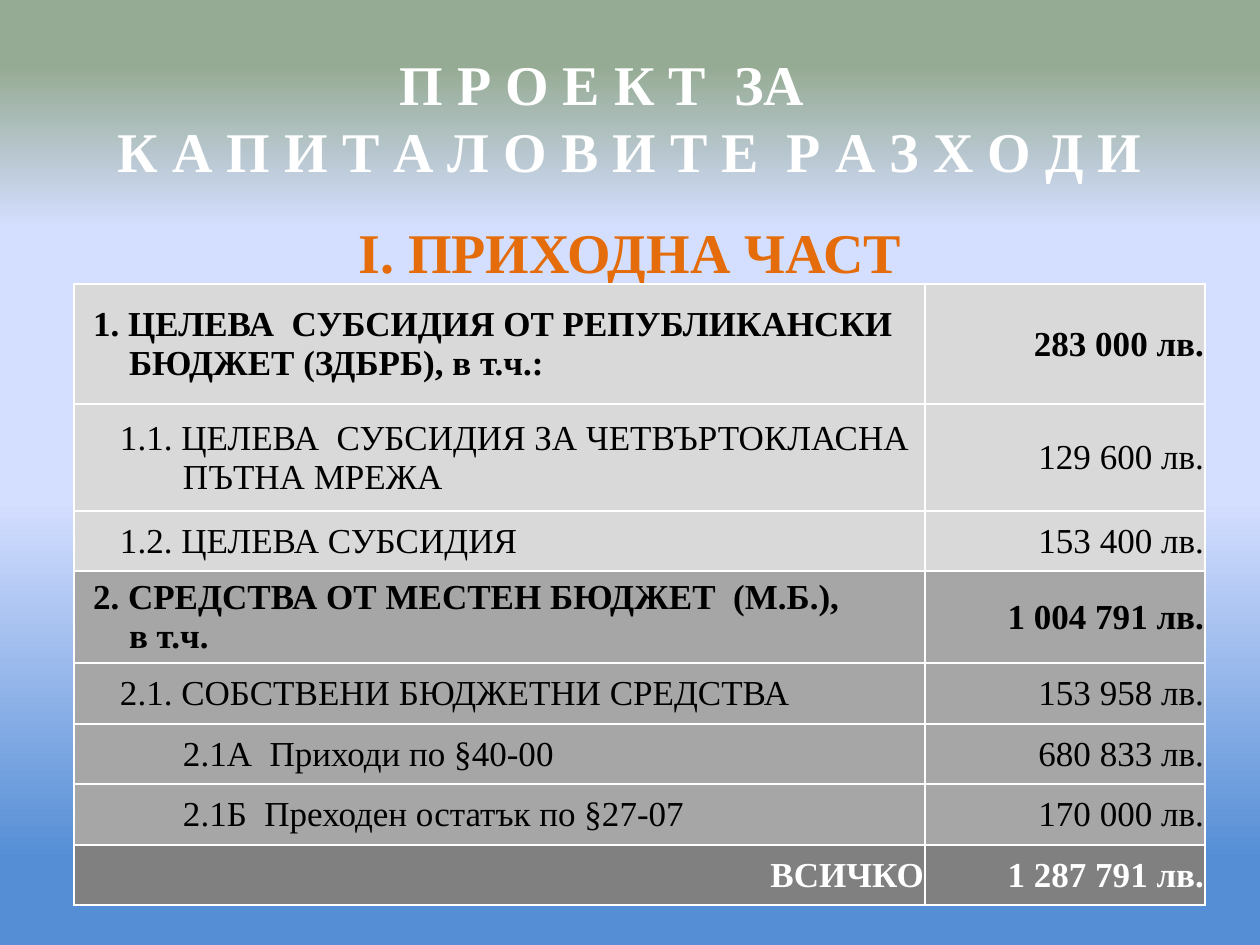
from lxml import etree
from pptx import Presentation
from pptx import util as u
from pptx.dml.color import RGBColor
from pptx.enum import text
from pptx.oxml.ns import qn

FONT = "Times New Roman"
WHITE = RGBColor(0xFF, 0xFF, 0xFF)
BLACK = RGBColor(0, 0, 0)
ORANGE = RGBColor(0xE4, 0x6C, 0x0A)
LIGHT = RGBColor(0xD9, 0xD9, 0xD9)
MEDIUM = RGBColor(0xA6, 0xA6, 0xA6)
DARK = RGBColor(0x80, 0x80, 0x80)
BLUE = RGBColor(0x55, 0x8E, 0xD5)
PALE = RGBColor(0xD4, 0xDE, 0xFF)
GREEN = RGBColor(0x96, 0xAB, 0x94)

LEFT, CENTER, RIGHT = (text.PP_ALIGN.LEFT, text.PP_ALIGN.CENTER,
                       text.PP_ALIGN.RIGHT)
SPACE = 9  # indent unit of the table, px

# Lines as (indent units, text), amount, fill, row height, heading row
ROWS = [
    ([(2, "1. ЦЕЛЕВА  СУБСИДИЯ ОТ РЕПУБЛИКАНСКИ"),
      (6, "БЮДЖЕТ (ЗДБРБ), в т.ч.:")], "283 000 лв.", LIGHT, 120, True),
    ([(5, "1.1. ЦЕЛЕВА  СУБСИДИЯ ЗА ЧЕТВЪРТОКЛАСНА"),
      (12, "ПЪТНА МРЕЖА")], "129 600 лв.", LIGHT, 107, False),
    ([(5, "1.2. ЦЕЛЕВА СУБСИДИЯ")], "153 400 лв.", LIGHT, 60, False),
    ([(2, "2. СРЕДСТВА ОТ МЕСТЕН БЮДЖЕТ  (М.Б.),"),
      (6, "в т.ч.")], "1 004 791 лв.", MEDIUM, 92, True),
    ([(5, "2.1. СОБСТВЕНИ БЮДЖЕТНИ СРЕДСТВА")], "153 958 лв.", MEDIUM, 61,
     False),
    ([(12, "2.1А  Приходи по §40-00")], "680 833 лв.", MEDIUM, 60, False),
    ([(12, "2.1Б  Преходен остатък по §27-07")], "170 000 лв.", MEDIUM, 61,
     False),
    ([(0, "ВСИЧКО")], "1 287 791 лв.", DARK, 60, True),
]


def px(n):
    return u.Emu(round(n * 914400 / 126))


def write(p, words, size=20, color=BLACK, bold=False, align=LEFT,
          left=0, right=0):
    """Fill one paragraph; left and right are indents in px."""
    p.alignment = align
    pPr = p._p.get_or_add_pPr()
    pPr.set("marL", str(px(left)))
    pPr.set("marR", str(px(right)))
    pPr.set("indent", "0")
    r = p.add_run()
    r.text = words
    f = r.font
    f.name, f.size, f.bold = FONT, u.Pt(size), bold
    f.color.rgb = color


def paint_background(s):
    fill = s.background.fill
    fill.gradient()
    fill.gradient_angle = 90
    stops = next(s.element.iter(qn("a:gsLst")))
    for gs in list(stops):
        stops.remove(gs)
    for percent, color in [(9, BLUE), (47, PALE), (76, PALE), (93, GREEN)]:
        gs = etree.SubElement(stops, qn("a:gs"), pos=str(percent * 1000))
        etree.SubElement(gs, qn("a:srgbClr"), val=str(color))


def place_title(s, x, y, w, h):
    sp = s.shapes.title
    sp.left, sp.top, sp.width, sp.height = map(px, (x, y, w, h))
    tf = sp.text_frame
    tf.word_wrap = True
    tf.auto_size = text.MSO_AUTO_SIZE.NONE
    tf.vertical_anchor = text.MSO_ANCHOR.MIDDLE
    style = dict(size=32, color=WHITE, bold=True, align=CENTER)
    write(tf.paragraphs[0], "П Р О Е К Т  ЗА", right=56, **style)
    write(tf.add_paragraph(), "К А П И Т А Л О В И Т Е  Р А З Х О Д И", **style)


def place_subtitle(s, x, y, w, h):
    tf = s.shapes.add_textbox(*map(px, (x, y, w, h))).text_frame
    tf.word_wrap = True
    tf.margin_top = px(14)
    write(tf.paragraphs[0], "І. ПРИХОДНА ЧАСТ", size=32, color=ORANGE,
          bold=True, align=CENTER)


def style_cell(cell, color):
    cell.fill.solid()
    cell.fill.fore_color.rgb = color
    cell.vertical_anchor = text.MSO_ANCHOR.MIDDLE
    cell.margin_left = cell.margin_right = cell.margin_top = px(1)
    cell.margin_bottom = 0
    # Borders come before the fill in the cell properties
    tcPr = cell._tc.get_or_add_tcPr()
    for i, side in enumerate(("lnL", "lnR", "lnT", "lnB")):
        ln = etree.Element(qn("a:" + side), w=str(u.Pt(1)))
        solid = etree.SubElement(ln, qn("a:solidFill"))
        etree.SubElement(solid, qn("a:srgbClr"), val=str(WHITE))
        tcPr.insert(i, ln)


def place_table(s, x, y, w, amount_w):
    h = sum(row[3] for row in ROWS)
    table = s.shapes.add_table(len(ROWS), 2, *map(px, (x, y, w, h))).table
    table.first_row = table.horz_banding = False
    table.columns[0].width = px(w - amount_w)
    table.columns[1].width = px(amount_w)
    for i, (lines, amount, fill, height, bold) in enumerate(ROWS):
        table.rows[i].height = px(height)
        label, value = table.cell(i, 0), table.cell(i, 1)
        style_cell(label, fill)
        style_cell(value, fill)
        total = fill == DARK
        style = dict(bold=bold, color=WHITE if total else BLACK)
        tf = label.text_frame
        for j, (indent, words) in enumerate(lines):
            p = tf.add_paragraph() if j else tf.paragraphs[0]
            write(p, words, left=indent * SPACE,
                  align=RIGHT if total else LEFT, **style)
        write(value.text_frame.paragraphs[0], amount, align=RIGHT, **style)


def main():
    prs = Presentation()
    prs.slide_width, prs.slide_height = px(1260), px(945)
    s = prs.slides.add_slide(prs.slide_layouts[5])
    paint_background(s)
    place_title(s, 63, 38, 1134, 158)
    place_subtitle(s, 63, 204, 1134, 640)
    place_table(s, 74, 284, 1131, 280)
    prs.save("out.pptx")


if __name__ == "__main__":
    main()
